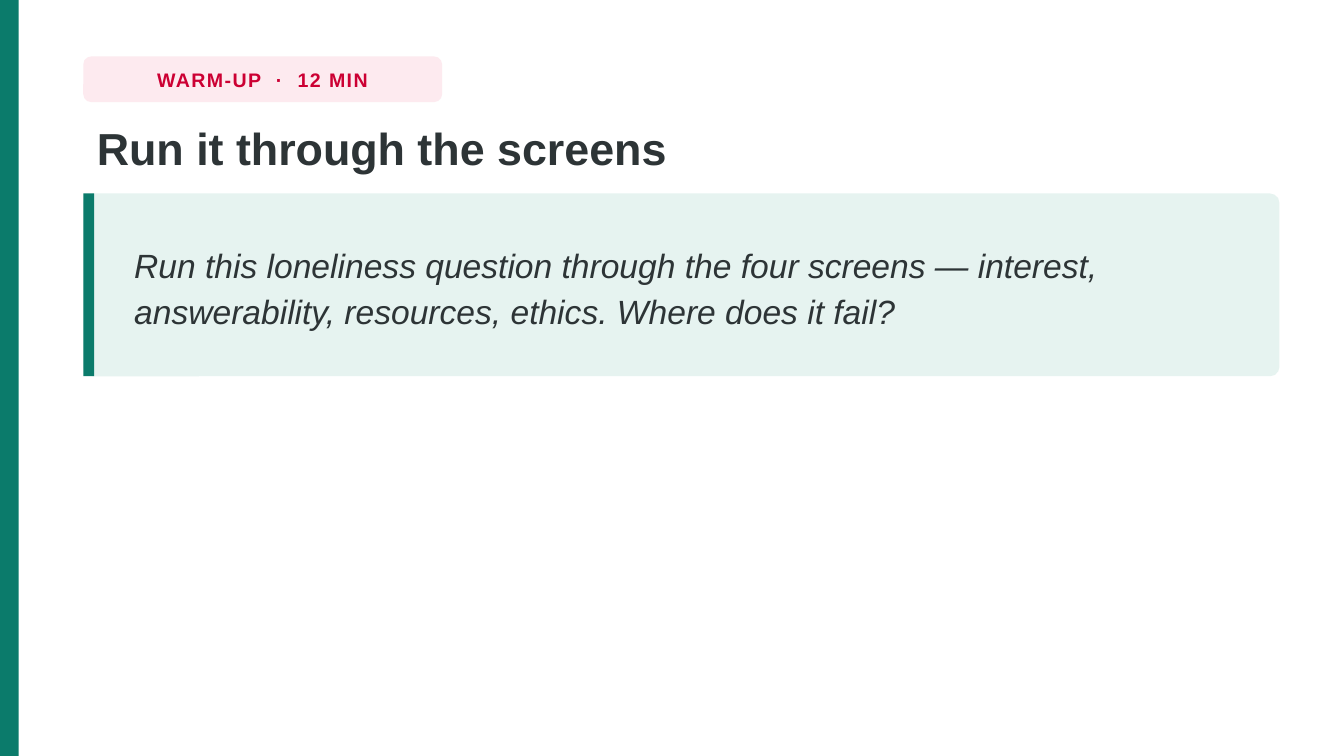
from pptx import Presentation
from pptx.dml.color import RGBColor
from pptx.enum import shapes, text
from pptx.util import Pt

TEAL = RGBColor(0x0B, 0x7B, 0x6B)
MINT = RGBColor(0xE6, 0xF3, 0xF0)
ROSE = RGBColor(0xFD, 0xEA, 0xEF)
CRIMSON = RGBColor(0xCC, 0x00, 0x33)
INK = RGBColor(0x2D, 0x34, 0x36)
FONT = "Arial"

TAG = "WARM-UP  ·  12 MIN"
TITLE = "Run it through the screens"
QUESTION = ("Run this loneliness question through the four screens — interest, "
            "answerability, resources, ethics. Where does it fail?")

SLIDE_W, SLIDE_H = 720, 405
LEFT, CONTENT_W = 44.64, 640.8
CARD_TOP, CARD_H = 103.68, 97.92
QUESTION_LEFT, QUESTION_W, QUESTION_PAD = 64.8, 601.2, 3.6
RADIUS = 5


def add_box(s, x, y, w, h, fill, radius=0):
    kind = shapes.MSO_SHAPE.ROUNDED_RECTANGLE if radius else shapes.MSO_SHAPE.RECTANGLE
    sp = s.shapes.add_shape(kind, Pt(x), Pt(y), Pt(w), Pt(h))
    if radius:
        sp.adjustments[0] = radius / min(w, h)
    sp.fill.solid()
    sp.fill.fore_color.rgb = fill
    sp.line.fill.background()
    sp.shadow.inherit = False
    return sp


def write(sp, content, size, color=INK, bold=False, italic=False, spacing=None,
          tracking=0, align=text.PP_ALIGN.LEFT, anchor=text.MSO_ANCHOR.MIDDLE, wrap=True):
    tf = sp.text_frame
    tf.word_wrap = wrap
    tf.auto_size = text.MSO_AUTO_SIZE.NONE
    tf.vertical_anchor = anchor
    p = tf.paragraphs[0]
    p.alignment = align
    p.line_spacing = spacing
    r = p.add_run()
    r.text = content
    r.font.name, r.font.size = FONT, Pt(size)
    r.font.bold, r.font.italic = bold, italic
    r.font.color.rgb = color
    if tracking:
        r._r.get_or_add_rPr().set("spc", str(round(tracking * 100)))


prs = Presentation()
prs.slide_width, prs.slide_height = Pt(SLIDE_W), Pt(SLIDE_H)
s = prs.slides.add_slide(prs.slide_layouts[5])

add_box(s, 0, 0, 10.08, SLIDE_H, TEAL)

tag = add_box(s, LEFT, 30.24, 192.24, 24.48, ROSE, 4.3)
write(tag, TAG, 10.5, color=CRIMSON, bold=True, tracking=0.8,
      align=text.PP_ALIGN.CENTER, wrap=False)

title = s.shapes.title
title.left, title.top = Pt(LEFT), Pt(60.48)
title.width, title.height = Pt(CONTENT_W), Pt(40.32)
write(title, TITLE, 24, bold=True, spacing=1.02, anchor=text.MSO_ANCHOR.TOP)

add_box(s, LEFT, CARD_TOP, CONTENT_W, CARD_H, MINT, RADIUS)
add_box(s, LEFT, CARD_TOP, 5.76, CARD_H, TEAL)
question = s.shapes.add_textbox(Pt(QUESTION_LEFT), Pt(CARD_TOP + QUESTION_PAD),
                                Pt(QUESTION_W), Pt(CARD_H - 2 * QUESTION_PAD))
write(question, QUESTION, 18, italic=True, spacing=1.16)

prs.save("out.pptx")
